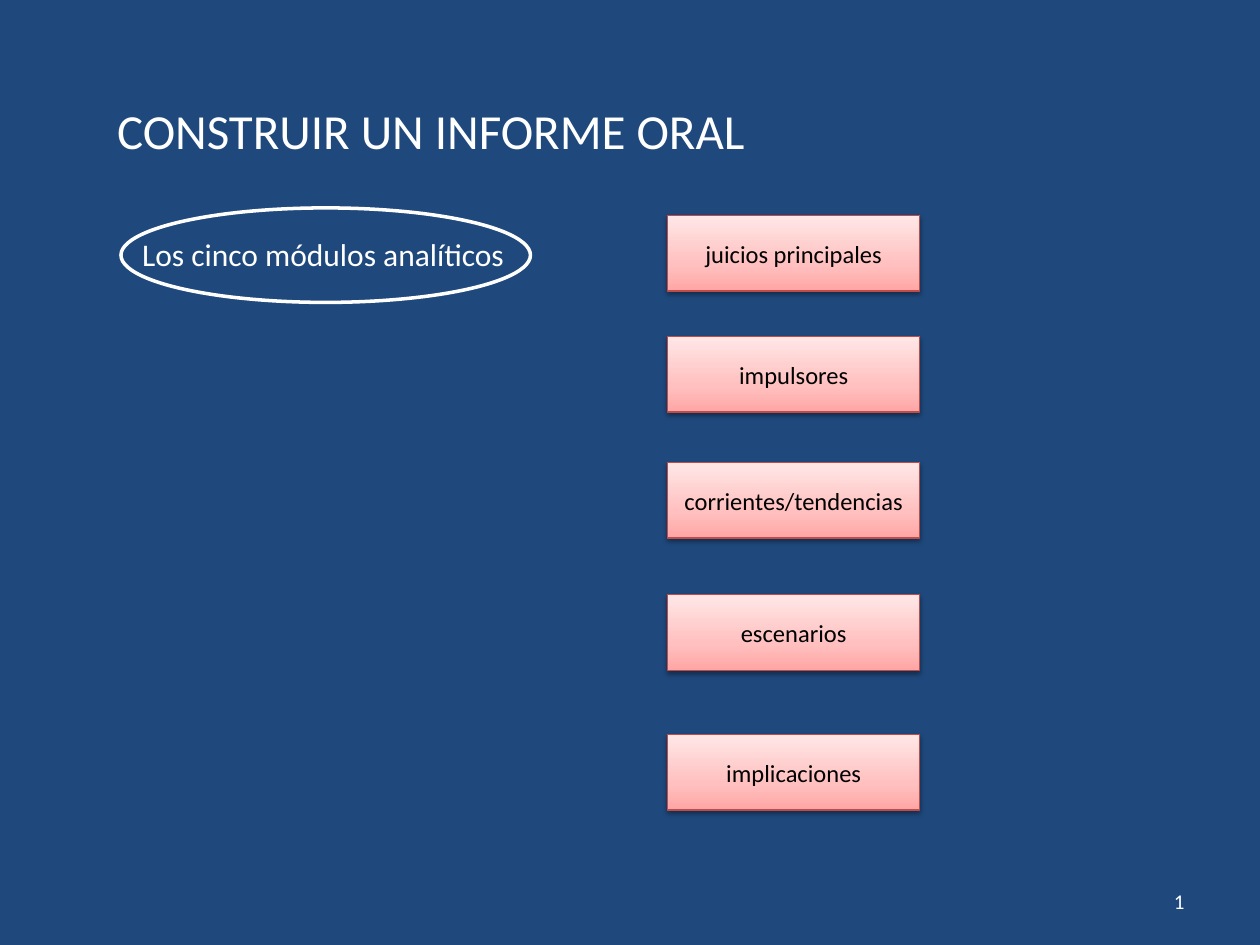
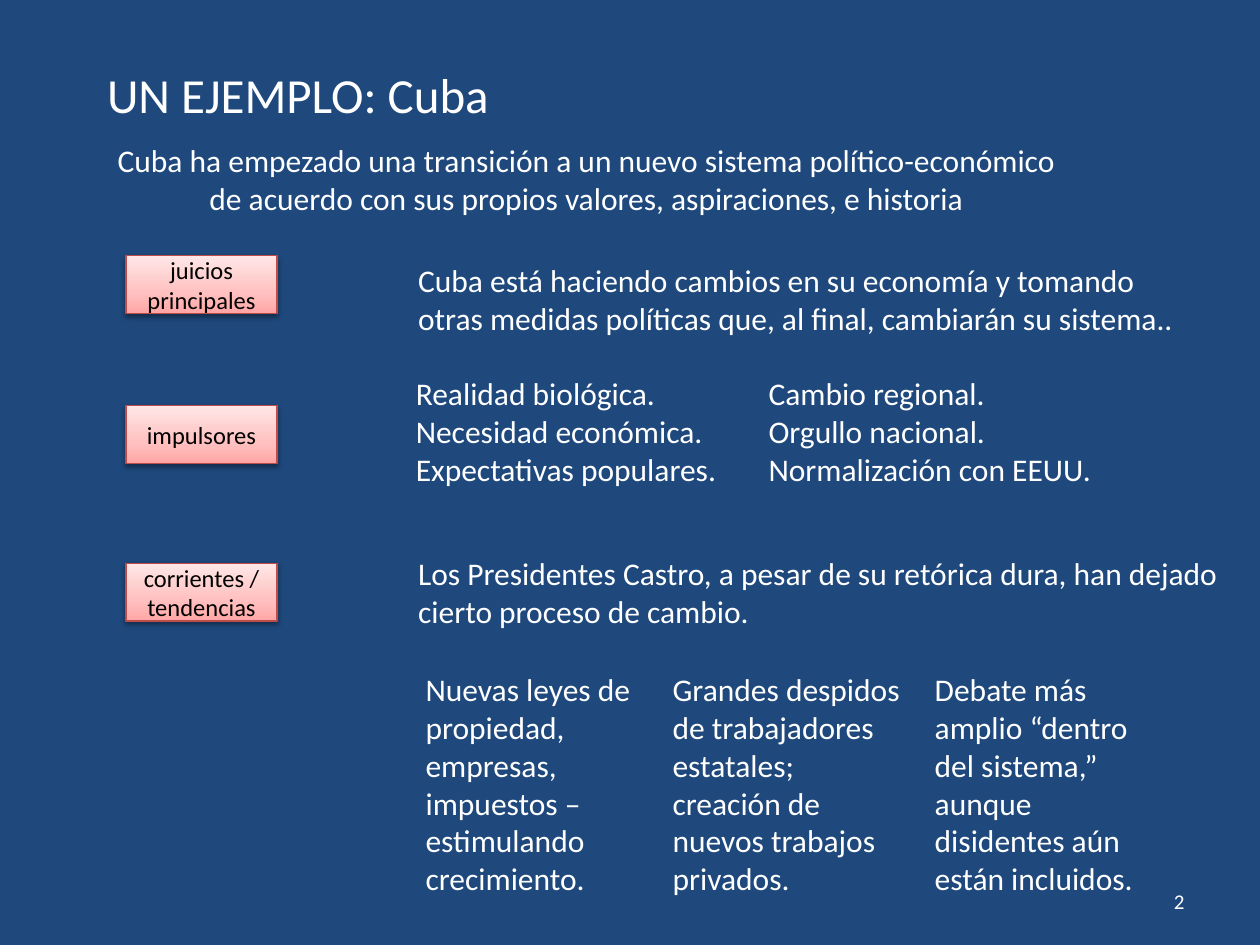
"""Builds two slides on preparing an oral briefing, with Cuba as the example."""
from lxml.etree import SubElement
from pptx import Presentation
from pptx.dml.color import RGBColor
from pptx.enum.shapes import MSO_SHAPE
from pptx.enum.text import MSO_ANCHOR, MSO_AUTO_SIZE, PP_ALIGN
from pptx.oxml.ns import qn
from pptx.util import Inches, Pt

NAVY = RGBColor(0x1F, 0x49, 0x7D)
WHITE = RGBColor(0xFF, 0xFF, 0xFF)
BLACK = RGBColor(0x00, 0x00, 0x00)
BRICK = RGBColor(0xBF, 0x4C, 0x48)
ROSE = RGBColor(0xFF, 0xA6, 0xA5)
PINK = RGBColor(0xFF, 0xC0, 0xBF)
BLUSH = RGBColor(0xFF, 0xE7, 0xE7)
MODULE_GRADIENT = ((0, ROSE), (35, PINK), (100, BLUSH))

FONT = "Calibri"
TITLE_SIZE, TEXT_SIZE, MODULE_SIZE, NUMBER_SIZE = 28, 18, 14, 12
COLUMNS, ROWS = 100, 75
TWO_CONTENT, TITLE_ONLY = 3, 5


class Deck:
    """Holds the shared style and the current slide; places are in grid columns and rows."""

    def __init__(self):
        self.presentation = Presentation()
        self.presentation.slide_width = Inches(10)
        self.presentation.slide_height = Inches(7.5)
        backdrop = self.presentation.slide_master.background.fill
        backdrop.solid()
        backdrop.fore_color.rgb = NAVY
        self.slide = None

    def place(self, column, row, width, height):
        """Converts a grid cell range to slide lengths."""
        across = self.presentation.slide_width / COLUMNS
        down = self.presentation.slide_height / ROWS
        return [round(n) for n in (column * across, row * down, width * across, height * down)]

    def fill_frame(self, frame, lines, size=TEXT_SIZE, color=WHITE,
                   align=PP_ALIGN.LEFT, anchor=MSO_ANCHOR.TOP, wrap=True):
        """Fills a text frame with one paragraph per line."""
        frame.word_wrap = wrap
        frame.auto_size = MSO_AUTO_SIZE.NONE
        frame.vertical_anchor = anchor
        for index, line in enumerate(lines):
            paragraph = frame.add_paragraph() if index else frame.paragraphs[0]
            paragraph.alignment = align
            paragraph.space_before = Pt(0)
            run = paragraph.add_run()
            run.text = line
            run.font.name = FONT
            run.font.size = Pt(size)
            run.font.color.rgb = color

    def start(self, layout, heading, column, row):
        """Adds a slide with its title and slide number."""
        layouts = self.presentation.slide_layouts
        self.slide = self.presentation.slides.add_slide(layouts[layout])
        title = self.slide.shapes.title
        title.left, title.top, title.width, title.height = self.place(column, row, 62.5, 5.7)
        self.fill_frame(title.text_frame, [heading], TITLE_SIZE)
        self.number()

    def number(self):
        """Adds the slide number as a live field."""
        frame = self.text(str(len(self.presentation.slides)), 71.7, 69.5, 23.3, 4,
                          size=NUMBER_SIZE, align=PP_ALIGN.RIGHT, anchor=MSO_ANCHOR.MIDDLE)
        run = frame.paragraphs[0].runs[0]._r
        field = SubElement(run.getparent(), qn("a:fld"), type="slidenum",
                           id="{B6F15528-21DE-4FAA-801E-634DDDAF4B2B}")
        field.extend(list(run))
        run.getparent().remove(run)

    def text(self, words, column, row, width, height, **style):
        """Adds a text box and returns its frame."""
        box = self.slide.shapes.add_textbox(*self.place(column, row, width, height))
        self.fill_frame(box.text_frame, [words], **style)
        return box.text_frame

    def items(self, index, lines, column, row, width, height):
        """Fills a body placeholder with an unbulleted list."""
        body = self.slide.placeholders[index]
        body.left, body.top, body.width, body.height = self.place(column, row, width, height)
        self.fill_frame(body.text_frame, lines)
        for paragraph in body.text_frame.paragraphs:
            properties = paragraph._p.get_or_add_pPr()
            properties.set("marL", "0")
            properties.set("indent", "0")
            SubElement(properties, qn("a:buNone"))

    def module(self, name, column, row, width, height):
        """Adds a shaded analytic module box."""
        box = self.slide.shapes.add_shape(
            MSO_SHAPE.RECTANGLE, *self.place(column, row, width, height))
        box.fill.gradient()
        box.fill.gradient_angle = 90
        properties = box._element.spPr
        stops = properties.find(f".//{qn('a:gsLst')}")
        for stop in list(stops):
            stops.remove(stop)
        for position, color in MODULE_GRADIENT:
            stop = SubElement(stops, qn("a:gs"), pos=str(position * 1000))
            SubElement(stop, qn("a:srgbClr"), val=str(color))
        box.line.color.rgb = BRICK
        box.line.width = Pt(0.75)
        box.shadow.inherit = False
        shadow = SubElement(properties.find(qn("a:effectLst")), qn("a:outerShdw"),
                            blurRad=str(Pt(3.1)), dist=str(Pt(1.6)),
                            dir="5400000", rotWithShape="0")
        shade = SubElement(shadow, qn("a:srgbClr"), val=str(BLACK))
        SubElement(shade, qn("a:alpha"), val="38000")
        self.fill_frame(box.text_frame, [name], MODULE_SIZE, BLACK,
                        PP_ALIGN.CENTER, MSO_ANCHOR.MIDDLE)

    def ring(self, column, row, width, height):
        """Adds an unfilled white ellipse."""
        ellipse = self.slide.shapes.add_shape(
            MSO_SHAPE.OVAL, *self.place(column, row, width, height))
        ellipse.shadow.inherit = False
        ellipse.fill.background()
        ellipse.line.color.rgb = WHITE
        ellipse.line.width = Pt(2)


def build_modules(deck):
    """Lists the five analytic modules."""
    deck.start(TITLE_ONLY, "CONSTRUIR UN INFORME ORAL", 8.3, 7.5)
    deck.text("Los cinco módulos analíticos", 10.3, 18.2, 31.1, 4, wrap=False)
    deck.ring(9.6, 16.5, 32.5, 7.5)
    module_rows = {"juicios principales": 17.1, "impulsores": 26.7,
                   "corrientes/tendencias": 36.7, "escenarios": 47.2,
                   "implicaciones": 58.3}
    for name, row in module_rows.items():
        deck.module(name, 53, row, 20, 6)


def build_example(deck):
    """Applies the first three modules to Cuba."""
    deck.start(TWO_CONTENT, "UN EJEMPLO: Cuba", 7.5, 4.6)
    deck.text("Cuba ha empezado una transición a un nuevo sistema político-económico "
              "de acuerdo con sus propios valores, aspiraciones, e historia",
              7.9, 10.7, 77.3, 7.1, align=PP_ALIGN.CENTER)
    module_rows = {"juicios principales": 20.3, "impulsores": 32.2,
                   "corrientes / tendencias": 44.7}
    for name, row in module_rows.items():
        deck.module(name, 10, row, 12, 4.6)

    deck.text("Cuba está haciendo cambios en su economía y tomando otras medidas "
              "políticas que, al final, cambiarán su sistema..", 32.2, 20.2, 62.5, 7.1)
    deck.items(1, ["Realidad biológica.", "Necesidad económica.",
                   "Expectativas populares."], 32, 29.2, 26.4, 10.1)
    deck.items(2, ["Cambio regional.", "Orgullo nacional.",
                   "Normalización con EEUU."], 60, 29.2, 29, 10.1)
    deck.text("Los Presidentes Castro, a pesar de su retórica dura, han dejado "
              "cierto proceso de cambio.", 32.2, 43.5, 67.2, 13.1)

    trends = (
        ("Nuevas leyes de propiedad, empresas, impuestos – estimulando crecimiento.",
         32.8, 19.6),
        ("Grandes despidos de trabajadores estatales; creación de nuevos trabajos privados.",
         52.4, 20.7),
        ("Debate más amplio “dentro del sistema,” aunque disidentes aún están incluidos.",
         73.2, 20.2),
    )
    for trend, column, width in trends:
        deck.text(trend, column, 52.7, width, 19.2)


def main():
    """Builds and saves the presentation."""
    deck = Deck()
    build_modules(deck)
    build_example(deck)
    deck.presentation.save("out.pptx")


if __name__ == "__main__":
    main()
